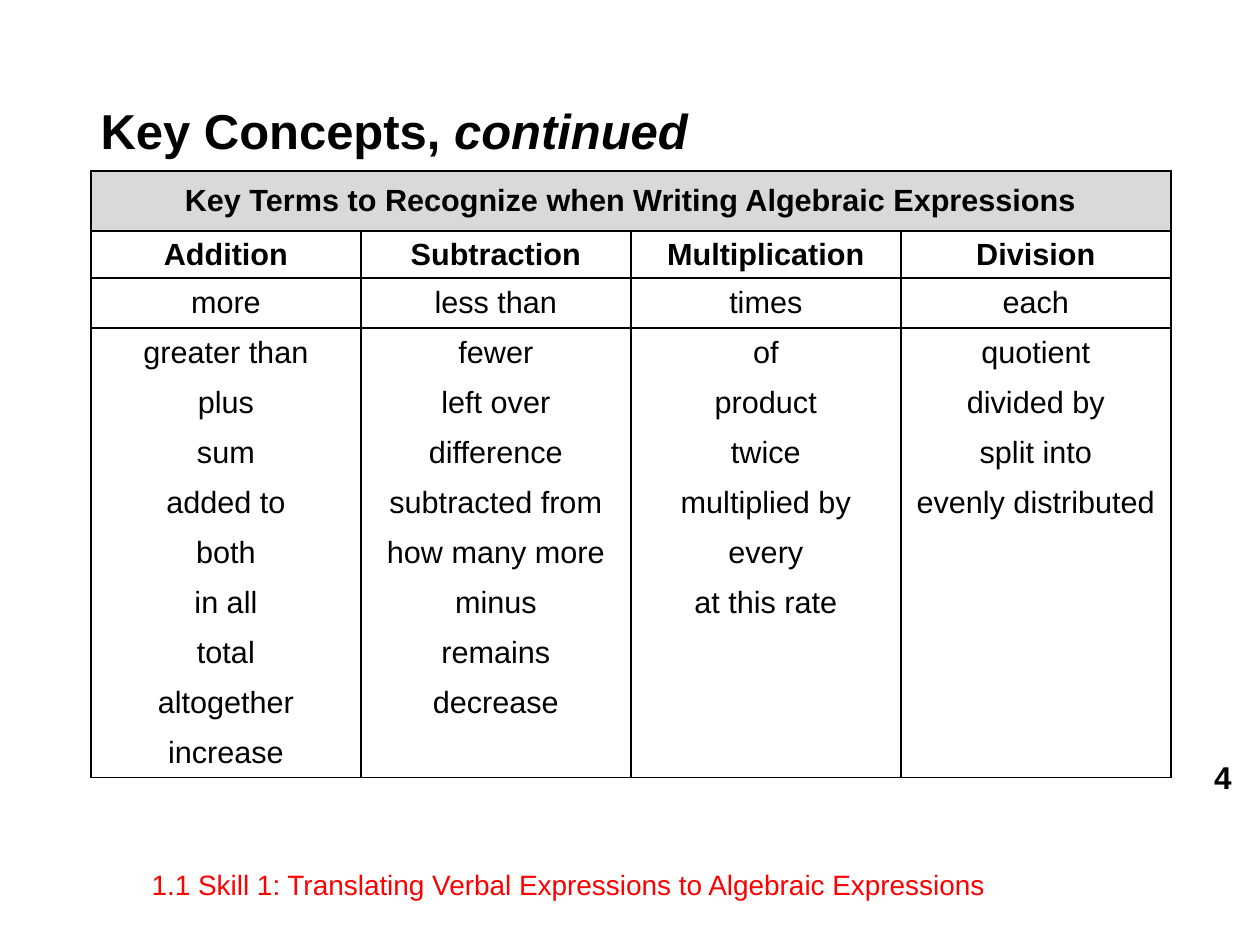
import pptx
import pptx.dml.color
import pptx.enum.text
import pptx.oxml
import pptx.oxml.ns
import pptx.util

PX = 914400 / 126
FONT = "Arial"
COLORS = {"text": "000000", "footer": "FF0000", "banner": "D9D9D9", "cell": "FFFFFF"}
ALIGN = pptx.enum.text.PP_ALIGN
ANCHOR = pptx.enum.text.MSO_ANCHOR
NO_STYLE = "{2D5ABB26-0587-4C30-8999-92F81FD0307C}"
ROW_HEIGHTS = [60, 47] + [50] * 10
COL_WIDTH = 270
HEADING = "Key Terms to Recognize when Writing Algebraic Expressions"
TERMS = {
    "Addition": ["more", "greater than", "plus", "sum", "added to", "both",
                 "in all", "total", "altogether", "increase"],
    "Subtraction": ["less than", "fewer", "left over", "difference", "subtracted from",
                    "how many more", "minus", "remains", "decrease"],
    "Multiplication": ["times", "of", "product", "twice", "multiplied by", "every",
                       "at this rate"],
    "Division": ["each", "quotient", "divided by", "split into", "evenly distributed"],
}


def px(n):
    return pptx.util.Emu(round(n * PX))


def rgb(name):
    return pptx.dml.color.RGBColor.from_string(COLORS[name])


def format_run(r, size, color="text", bold=False, italic=False):
    r.font.name = FONT
    r.font.size = pptx.util.Pt(size)
    r.font.bold = bold
    r.font.italic = italic
    r.font.color.rgb = rgb(color)


def place(sp, x, y, w, h, anchor):
    sp.left, sp.top, sp.width, sp.height = px(x), px(y), px(w), px(h)
    tf = sp.text_frame
    tf.word_wrap = True
    tf.auto_size = pptx.enum.text.MSO_AUTO_SIZE.NONE
    tf.vertical_anchor = anchor
    return tf


def add_title(s):
    tf = place(s.shapes.title, 88, 88, 1082, 689, ANCHOR.TOP)
    tf.margin_top = px(12)
    p = tf.paragraphs[0]
    p.alignment = ALIGN.LEFT
    for text, italic in (("Key Concepts, ", False), ("continued", True)):
        r = p.add_run()
        r.text = text
        format_run(r, 28, bold=True, italic=italic)


def add_footer(s):
    tf = place(s.placeholders[1], 139, 861, 931, 49, ANCHOR.TOP)
    tf.text = "1.1 Skill 1: Translating Verbal Expressions to Algebraic Expressions"
    p = tf.paragraphs[0]
    p.space_before = pptx.util.Pt(0)
    pPr = p._p.get_or_add_pPr()
    pPr.set("marL", "0")
    pPr.set("indent", "0")
    pPr.append(pptx.oxml.parse_xml(f"<a:buNone {pptx.oxml.ns.nsdecls('a')}/>"))
    format_run(p.runs[0], 16, "footer")


def add_page_number(s):
    sp = s.shapes.add_textbox(0, 0, 0, 0)
    tf = place(sp, 1143, 757, 101, 39, ANCHOR.MIDDLE)
    tf.text = "4"
    p = tf.paragraphs[0]
    p.alignment = ALIGN.RIGHT
    format_run(p.runs[0], 18, bold=True)


def set_borders(cell, sides):
    tcPr = cell._tc.get_or_add_tcPr()
    for side in "LRTB":
        if side in sides:
            tcPr.append(pptx.oxml.parse_xml(
                f"<a:ln{side} {pptx.oxml.ns.nsdecls('a')} w=\"12700\"><a:solidFill>"
                f"<a:srgbClr val=\"{COLORS['text']}\"/></a:solidFill></a:ln{side}>"))


def fill_cell(cell, text, sides, fill="cell", bold=False):
    set_borders(cell, sides)
    cell.fill.solid()
    cell.fill.fore_color.rgb = rgb(fill)
    cell.vertical_anchor = ANCHOR.MIDDLE
    cell.margin_top = cell.margin_bottom = px(4)
    if text:
        cell.text_frame.text = text
        p = cell.text_frame.paragraphs[0]
        p.alignment = ALIGN.CENTER
        format_run(p.runs[0], 17.5, bold=bold)


def add_terms_table(s):
    rows, cols = len(ROW_HEIGHTS), len(TERMS)
    frame = s.shapes.add_table(rows, cols, px(91), px(171),
                               px(COL_WIDTH * cols), px(sum(ROW_HEIGHTS)))
    table = frame.table
    table.first_row = table.horz_banding = False
    table._tbl.tblPr.find(pptx.oxml.ns.qn("a:tableStyleId")).text = NO_STYLE
    for row, height in zip(table.rows, ROW_HEIGHTS):
        row.height = px(height)
    for c, (operation, terms) in enumerate(TERMS.items()):
        table.columns[c].width = px(COL_WIDTH)
        fill_cell(table.cell(0, c), "" if c else HEADING, "LRTB", "banner", True)
        fill_cell(table.cell(1, c), operation, "LRTB", bold=True)
        for i in range(rows - 2):
            sides = "LR" + ("T" if i == 0 else "") + ("B" if i == rows - 3 else "")
            fill_cell(table.cell(i + 2, c), terms[i] if i < len(terms) else "", sides)
    table.cell(0, 0).merge(table.cell(0, cols - 1))


def main():
    prs = pptx.Presentation()
    prs.slide_width, prs.slide_height = px(1260), px(945)
    s = prs.slides.add_slide(prs.slide_layouts[1])
    add_title(s)
    add_page_number(s)
    add_terms_table(s)
    add_footer(s)
    prs.save("out.pptx")


if __name__ == "__main__":
    main()
